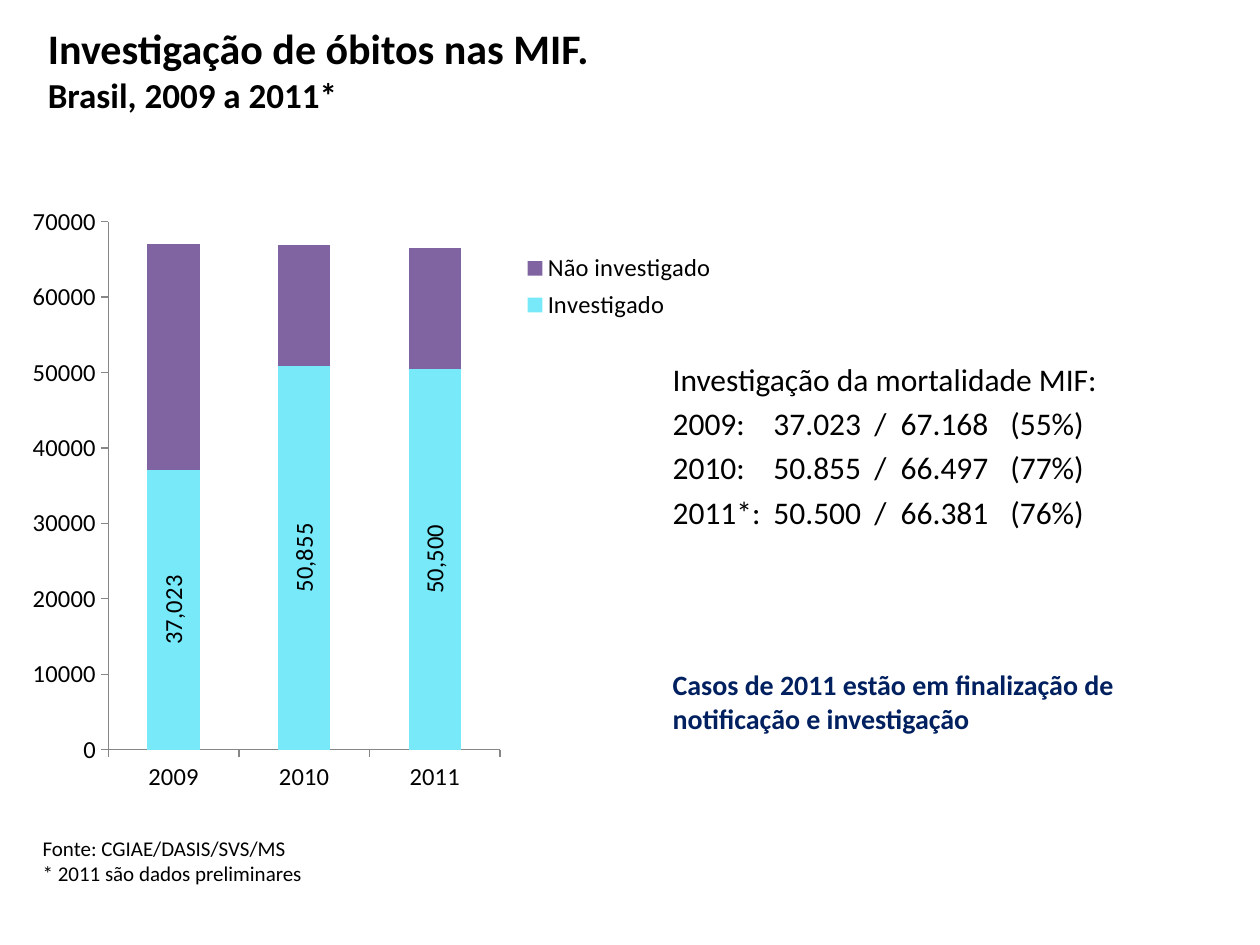
from lxml import etree
from pptx import Presentation
from pptx.chart.data import CategoryChartData
from pptx.dml.color import RGBColor
from pptx.enum.chart import XL_CHART_TYPE, XL_LABEL_POSITION, XL_LEGEND_POSITION, XL_TICK_MARK
from pptx.enum.text import MSO_ANCHOR, PP_ALIGN
from pptx.oxml import parse_xml
from pptx.oxml.ns import nsdecls, qn
from pptx.util import Inches, Pt

STACKED = XL_CHART_TYPE.COLUMN_STACKED
CENTER = XL_LABEL_POSITION.CENTER
RIGHT = XL_LEGEND_POSITION.RIGHT
OUTSIDE, NO_TICK = XL_TICK_MARK.OUTSIDE, XL_TICK_MARK.NONE
TOP, LEFT = MSO_ANCHOR.TOP, PP_ALIGN.LEFT
FONT = "Calibri"

TITLE = [("Investigação de óbitos nas MIF.", 24), ("Brasil, 2009 a 2011*", 20)]
YEARS = ["2009", "2010", "2011"]
SERIES = [
    ("Investigado", [37023, 50855, 50500], "78E9F8"),
    ("Não investigado", [30000, 16000, 16000], "8064A2"),
]
SUMMARY = [
    "Investigação da mortalidade MIF:",
    "2009:\t37.023\t/\t67.168\t(55%)",
    "2010:\t50.855\t/\t66.497\t(77%)",
    "2011*:\t50.500\t/\t66.381\t(76%)",
]
SUMMARY_TABS = [0.8, 1.6, 1.81, 2.68]
SOURCE = ["Fonte: CGIAE/DASIS/SVS/MS", "* 2011 são dados preliminares"]
NOTE = ["Casos de 2011 estão em finalização de notificação e investigação"]
CHART_BOX = (0.16, 1.55, 5.59, 4.84)
PLOT_BOX = (0.86, 1.76, 3.11, 4.19)
LEGEND_BOX = (4.13, 1.96, 1.57, 0.63)


def rgb(color):
    return RGBColor.from_string(color)


def style(font, size, color="000000", bold=False):
    font.name, font.size, font.bold = FONT, Pt(size), bold
    font.color.rgb = rgb(color)


def add_text(s, lines, box, size, color="000000", bold=False, before=0, tabs=()):
    tf = s.shapes.add_textbox(*map(Inches, box)).text_frame
    tf.word_wrap = True
    for i, line in enumerate(lines):
        p = tf.paragraphs[0] if i == 0 else tf.add_paragraph()
        p.space_before = Pt(before if i else 0)
        if tabs:
            tab_list = etree.SubElement(p._p.get_or_add_pPr(), qn("a:tabLst"))
            for pos in tabs:
                etree.SubElement(tab_list, qn("a:tab"), pos=str(Inches(pos)), algn="l")
        r = p.add_run()
        r.text = line
        style(r.font, size, color, bold)


def set_layout(parent, index, box, inner=False):
    for old in parent.findall(qn("c:layout")):
        parent.remove(old)
    left, top, width, height = CHART_BOX
    x, y, w, h = box
    shares = ((x - left) / width, (y - top) / height, w / width, h / height)
    target = '<c:layoutTarget val="inner"/>' if inner else ""
    modes = "".join(f'<c:{m}Mode val="edge"/>' for m in "xy")
    sizes = "".join(f'<c:{k} val="{v:.4f}"/>' for k, v in zip("xywh", shares))
    parent.insert(index, parse_xml(
        f'<c:layout {nsdecls("c")}><c:manualLayout>{target}{modes}{sizes}'
        "</c:manualLayout></c:layout>"))


def add_deaths_chart(s):
    data = CategoryChartData()
    data.categories = YEARS
    for name, values, _ in SERIES:
        data.add_series(name, values)
    chart = s.shapes.add_chart(STACKED, *map(Inches, CHART_BOX), data).chart
    style(chart.font, 14)
    chart.has_title = False
    plot = chart.plots[0]
    plot.gap_width, plot.overlap, plot.vary_by_categories = 150, 100, False
    for series, (_, _, color) in zip(plot.series, SERIES):
        series.format.fill.solid()
        series.format.fill.fore_color.rgb = rgb(color)

    labels = plot.series[0].data_labels
    labels.show_value = True
    labels.number_format, labels.number_format_is_linked = "#,##0", False
    labels.position = CENTER
    style(labels.font, 14)
    body = labels._element.find(qn("c:txPr")).find(qn("a:bodyPr"))
    body.set("rot", "-5400000")
    body.set("vert", "horz")

    for axis in (chart.category_axis, chart.value_axis):
        axis.has_major_gridlines = False
        axis.major_tick_mark, axis.minor_tick_mark = OUTSIDE, NO_TICK
        axis.format.line.color.rgb = rgb("868686")
        axis.format.line.width = Pt(0.75)
        style(axis.tick_labels.font, 14)
    value_axis = chart.value_axis
    value_axis.minimum_scale, value_axis.maximum_scale = 0, 70000
    value_axis.major_unit = 10000
    value_axis.tick_labels.number_format = "General"
    value_axis.tick_labels.number_format_is_linked = False

    chart.has_legend = True
    chart.legend.position = RIGHT
    chart.legend.include_in_layout = False
    style(chart.legend.font, 14)
    set_layout(chart.legend._element, 1, LEGEND_BOX)
    set_layout(chart._chartSpace.chart.plotArea, 0, PLOT_BOX, inner=True)


def add_title(s, box):
    title = s.shapes.title
    title.left, title.top, title.width, title.height = map(Inches, box)
    tf = title.text_frame
    tf.word_wrap, tf.vertical_anchor = True, TOP
    p = tf.paragraphs[0]
    p.alignment = LEFT
    for i, (text, size) in enumerate(TITLE):
        if i:
            p.add_line_break()
        r = p.add_run()
        r.text = text
        style(r.font, size, bold=True)


def main():
    prs = Presentation()
    prs.slide_width, prs.slide_height = Inches(10), Inches(7.5)
    s = prs.slides.add_slide(prs.slide_layouts[5])
    add_title(s, (0.28, 0.13, 5.13, 1.27))
    add_text(s, SUMMARY, (5.24, 2.81, 4.09, 1.89), 18, before=3.6, tabs=SUMMARY_TABS)
    add_deaths_chart(s)
    add_text(s, SOURCE, (0.24, 6.58, 5, 0.51), 12)
    add_text(s, NOTE, (5.24, 5.25, 4.09, 0.64), 16, color="002060", bold=True)
    prs.save("out.pptx")


if __name__ == "__main__":
    main()
